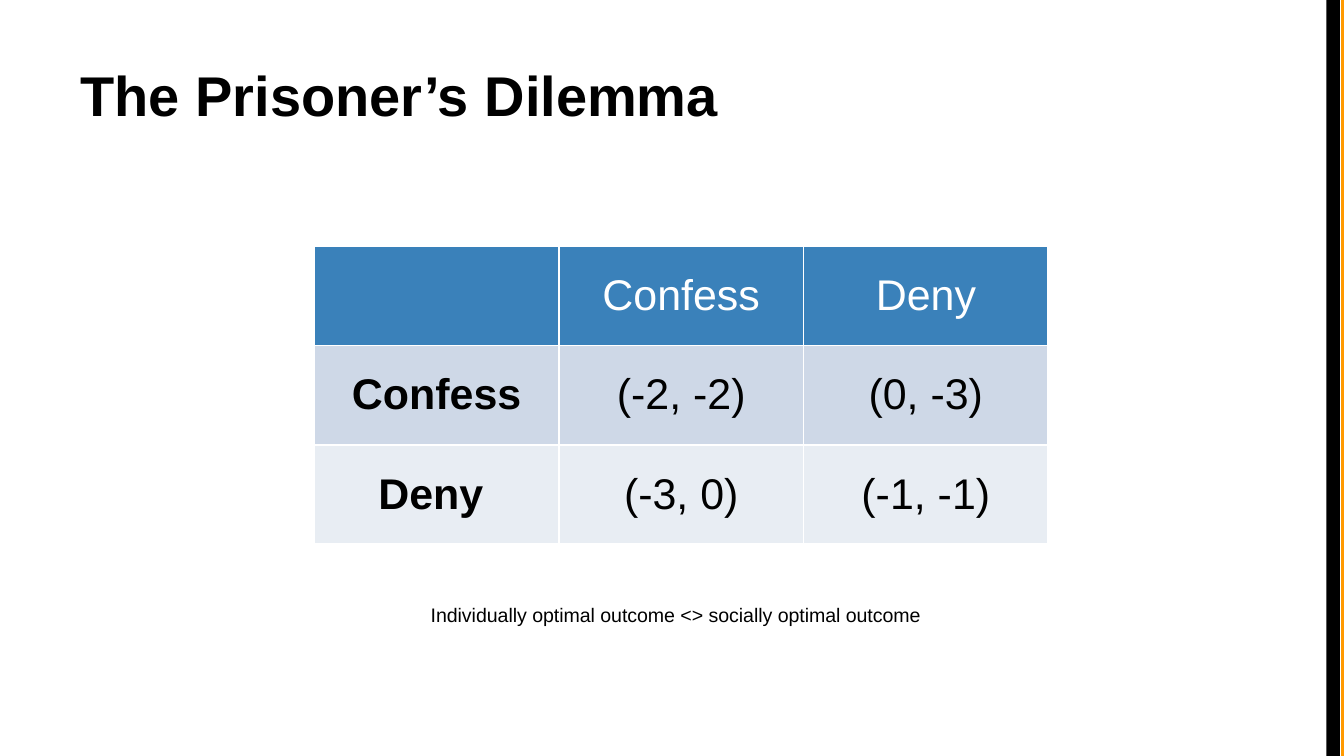
"""Build the Prisoner's Dilemma slide with its payoff table."""
from lxml import etree
from pptx import Presentation
from pptx.dml.color import RGBColor
from pptx.enum.shapes import MSO_SHAPE
from pptx.enum.text import MSO_ANCHOR, MSO_AUTO_SIZE, PP_ALIGN
from pptx.oxml.ns import qn
from pptx.util import Inches, Pt

RECTANGLE = MSO_SHAPE.RECTANGLE
MIDDLE = MSO_ANCHOR.MIDDLE
GROW = MSO_AUTO_SIZE.SHAPE_TO_FIT_TEXT
LEFT, CENTER = PP_ALIGN.LEFT, PP_ALIGN.CENTER
TITLE_ONLY = 5

COLORS = {
    "text": "000000", "white": "FFFFFF", "orange": "FF9900", "black": "000000",
    "header": "3A81BA", "band_dark": "CED8E7", "band_light": "E8EDF3",
}
FONT = "Arial"
WIDTH = 10
HEIGHT = WIDTH * 9 / 16

HEADING = "The Prisoner’s Dilemma"
PAYOFFS = [
    ["", "Confess", "Deny"],
    ["Confess", "(-2, -2)", "(0, -3)"],
    ["Deny ", "(-3, 0)", "(-1, -1)"],
]
ROW_FILLS = ["header", "band_dark", "band_light"]
CONCLUSION = "Individually optimal outcome <> socially optimal outcome"
EDGE_BARS = [("orange", 9.98), ("black", 9.87)]
BAR_WIDTH = 0.1
COLUMN, ROW = 1.82, 0.74


def color(name):
    return RGBColor.from_string(COLORS[name])


def box(*lengths):
    return [Inches(length) for length in lengths]


def write(frame, text, size, ink="text", bold=False, align=CENTER):
    paragraph = frame.paragraphs[0]
    paragraph.alignment = align
    run = paragraph.add_run()
    run.text = text
    run.font.name, run.font.size, run.font.bold = FONT, Pt(size), bold
    run.font.color.rgb = color(ink)


def add_borders(cell):
    properties = cell._tc.get_or_add_tcPr()
    for index, side in enumerate("LRTB"):
        line = etree.Element(qn(f"a:ln{side}"), w=str(Pt(1)))
        fill = etree.SubElement(line, qn("a:solidFill"))
        etree.SubElement(fill, qn("a:srgbClr"), val=COLORS["white"])
        properties.insert(index, line)


def add_edge_bars(slide):
    for fill, left in EDGE_BARS:
        bar = slide.shapes.add_shape(RECTANGLE, *box(left, 0, BAR_WIDTH, HEIGHT))
        bar.shadow.inherit = False
        bar.fill.solid()
        bar.fill.fore_color.rgb = color(fill)
        bar.line.fill.background()


def add_heading(slide):
    heading = slide.shapes.title
    heading.left, heading.top, heading.width, heading.height = box(0.5, 0.23, 9, 0.94)
    heading.line.color.rgb = color("white")
    heading.line.width = Pt(0.75)
    frame = heading.text_frame
    frame.vertical_anchor = MIDDLE
    frame.margin_left = frame.margin_right = Inches(0.1)
    frame.margin_top = frame.margin_bottom = Inches(0.1)
    write(frame, HEADING, 30, bold=True, align=LEFT)


def add_payoffs(slide):
    rows, columns = len(PAYOFFS), len(PAYOFFS[0])
    area = box(2.34, 1.83, columns * COLUMN, rows * ROW)
    table = slide.shapes.add_table(rows, columns, *area).table
    for r, values in enumerate(PAYOFFS):
        for c, value in enumerate(values):
            cell = table.cell(r, c)
            cell.fill.solid()
            cell.fill.fore_color.rgb = color(ROW_FILLS[r])
            cell.vertical_anchor = MIDDLE
            cell.margin_left = cell.margin_right = Inches(0.06)
            cell.margin_top = cell.margin_bottom = Inches(0.03)
            add_borders(cell)
            if value:
                write(cell.text_frame, value, 23, ink="text" if r else "white",
                      bold=c == 0)


def add_conclusion(slide):
    frame = slide.shapes.add_textbox(*box(2.75, 4.44, 4.56, 0.28)).text_frame
    frame.word_wrap = True
    frame.auto_size = GROW
    write(frame, CONCLUSION, 10.5)


def main():
    deck = Presentation()
    deck.slide_width, deck.slide_height = box(WIDTH, HEIGHT)
    slide = deck.slides.add_slide(deck.slide_layouts[TITLE_ONLY])
    add_edge_bars(slide)
    add_heading(slide)
    add_payoffs(slide)
    add_conclusion(slide)
    deck.save("out.pptx")


if __name__ == "__main__":
    main()
